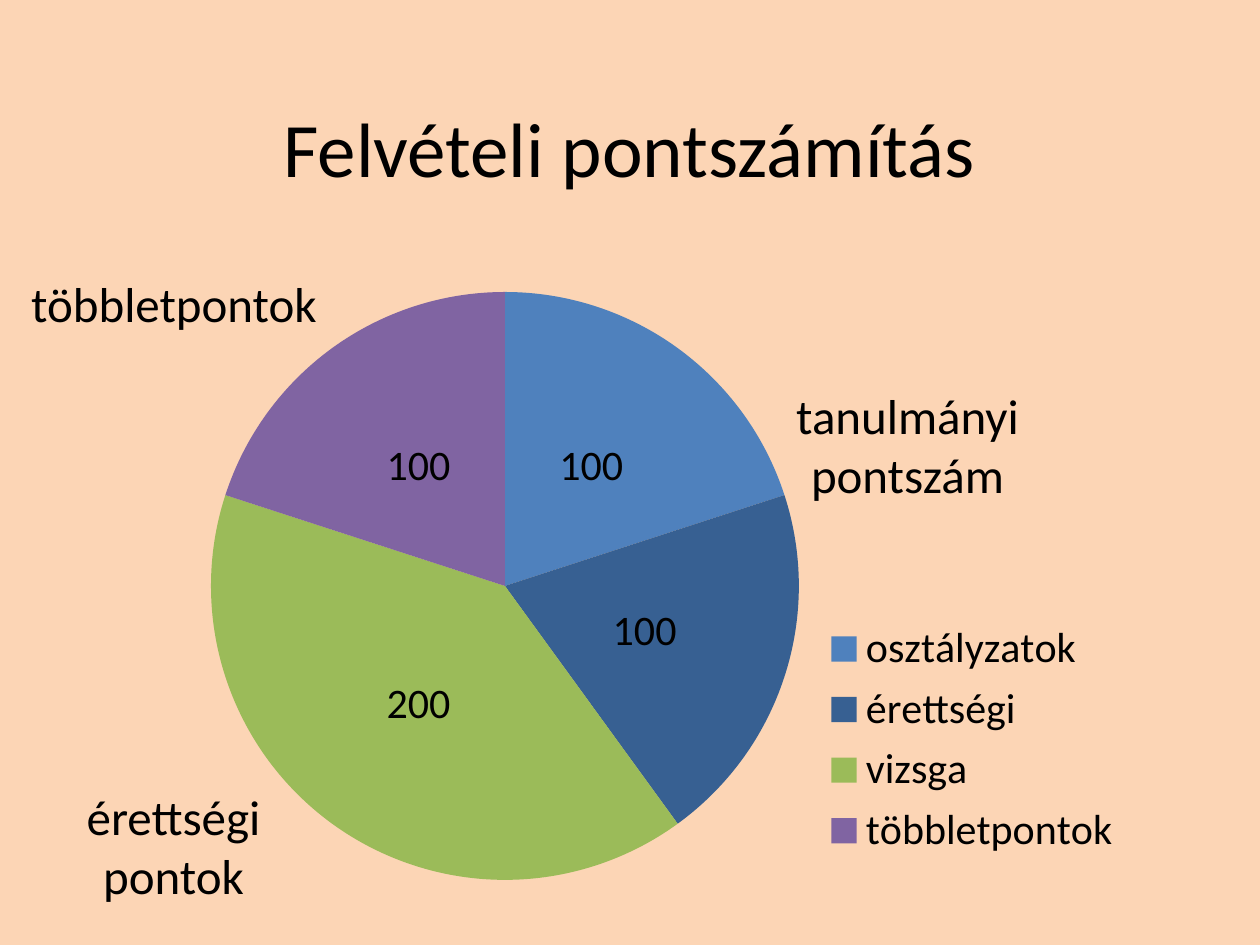
"""Build a slide with a pie chart of admission points."""
from lxml.etree import SubElement
from pptx import Presentation
from pptx.chart.data import CategoryChartData
from pptx.dml.color import RGBColor
from pptx.enum.chart import XL_CHART_TYPE as ChartType
from pptx.enum.chart import XL_LABEL_POSITION as LabelPosition
from pptx.enum.chart import XL_LEGEND_POSITION as LegendPosition
from pptx.enum.text import MSO_ANCHOR as Anchor
from pptx.enum.text import PP_ALIGN as Align
from pptx.oxml.ns import qn
from pptx.util import Pt

SCALE = 914400 / 126
FONT = "Calibri"
COLORS = {
    "background": "FCD5B5",
    "text": "000000",
    "osztályzatok": "4F81BD",
    "érettségi": "376092",
    "vizsga": "9BBB59",
    "többletpontok": "8064A2",
}
POINTS = {"osztályzatok": 100, "érettségi": 100, "vizsga": 200, "többletpontok": 100}
CHART_BOX = (194, 265, 942, 645)
PIE_BOX = (211, 292, 588, 588)
LEGEND_BOX = (822, 614, 300, 252)


def add_text(text, box, size=28, anchor=Anchor.TOP):
    shape = slide.shapes.add_textbox(*[round(length * SCALE) for length in box])
    frame = shape.text_frame
    frame.word_wrap = True
    frame.vertical_anchor = anchor
    paragraph = frame.paragraphs[0]
    paragraph.alignment = Align.CENTER
    run = paragraph.add_run()
    run.text = text
    run.font.name = FONT
    run.font.size = Pt(size)
    run.font.color.rgb = RGBColor.from_string(COLORS["text"])


def set_layout(layout, box, target=None):
    left, top, width, height = CHART_BOX
    manual = SubElement(layout, qn("c:manualLayout"))
    values = {"layoutTarget": target} if target else {}
    values |= {
        "xMode": "edge",
        "yMode": "edge",
        "x": round((box[0] - left) / width, 4),
        "y": round((box[1] - top) / height, 4),
        "w": round(box[2] / width, 4),
        "h": round(box[3] / height, 4),
    }
    for name, value in values.items():
        SubElement(manual, qn(f"c:{name}")).set("val", str(value))


presentation = Presentation()
presentation.slide_width = round(1260 * SCALE)
presentation.slide_height = round(945 * SCALE)
slide = presentation.slides.add_slide(presentation.slide_layouts[6])
slide.background.fill.solid()
slide.background.fill.fore_color.rgb = RGBColor.from_string(COLORS["background"])

add_text("Felvételi pontszámítás", (94, 45, 1071, 203), size=44, anchor=Anchor.MIDDLE)

data = CategoryChartData()
data.categories = list(POINTS)
data.add_series("Series 1", list(POINTS.values()))
chart = slide.shapes.add_chart(
    ChartType.PIE, *[round(length * SCALE) for length in CHART_BOX], data
).chart
chart.has_title = False
chart.font.name = FONT
chart.font.size = Pt(10)
chart.font.color.rgb = RGBColor.from_string(COLORS["text"])

plot = chart.plots[0]
plot.vary_by_categories = True
for index, category in enumerate(POINTS):
    fill = plot.series[0].points[index].format.fill
    fill.solid()
    fill.fore_color.rgb = RGBColor.from_string(COLORS[category])
plot.has_data_labels = True
labels = plot.data_labels
labels.show_value = True
labels.show_percentage = False
labels.position = LabelPosition.CENTER
labels.font.size = Pt(24)

chart.has_legend = True
legend = chart.legend
legend.position = LegendPosition.RIGHT
legend.include_in_layout = False
legend.font.size = Pt(24)

plot_area = chart.element.find(".//" + qn("c:plotArea"))
pie_layout = plot_area.find(qn("c:layout"))
if pie_layout is None:
    pie_layout = SubElement(plot_area, qn("c:layout"))
    plot_area.insert(0, pie_layout)
set_layout(pie_layout, PIE_BOX, target="inner")
legend_element = chart.element.find(".//" + qn("c:legend"))
legend_layout = legend_element.find(qn("c:layout"))
if legend_layout is None:
    legend_layout = SubElement(legend_element, qn("c:layout"))
    legend_element.insert(1, legend_layout)
set_layout(legend_layout, LEGEND_BOX)

add_text("tanulmányi pontszám", (759, 379, 297, 131))
add_text("érettségi pontok", (25, 780, 297, 131))
add_text("többletpontok", (10, 267, 328, 72))

presentation.save("out.pptx")
